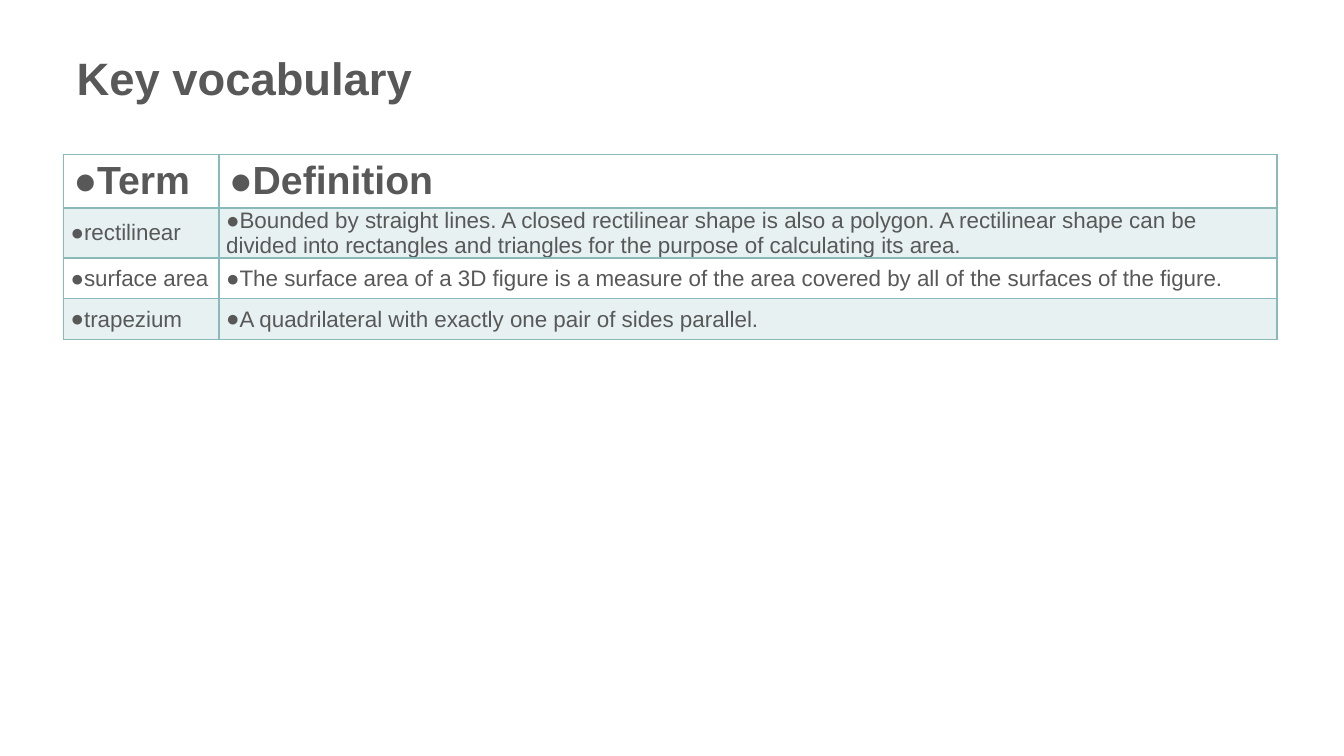
from lxml.etree import SubElement
from pptx import Presentation
from pptx.dml.color import RGBColor
from pptx.enum.text import MSO_ANCHOR, PP_ALIGN
from pptx.oxml.ns import qn
from pptx.util import Cm, Pt

TITLE = "Key vocabulary"
HEADINGS = ("Term", "Definition")
VOCABULARY = [
    ("rectilinear",
     "Bounded by straight lines. A closed rectilinear shape is also a polygon. "
     "A rectilinear shape can be divided into rectangles and triangles for the "
     "purpose of calculating its area."),
    ("surface area",
     "The surface area of a 3D figure is a measure of the area covered by all "
     "of the surfaces of the figure."),
    ("trapezium", "A quadrilateral with exactly one pair of sides parallel."),
]
COLOURS = {"text": "585858", "teal": "8AB9B9"}
FONT = "Arial"
COLUMN_WIDTHS = (Cm(3.92), Cm(26.66))
ROW_HEIGHT = Cm(1.03)
BAND_OPACITY = "20000"


def style_font(font, size, bold):
    font.name = FONT
    font.size = Pt(size)
    font.bold = bold
    font.color.rgb = RGBColor.from_string(COLOURS["text"])


def add_bullet(para):
    properties = para._p.get_or_add_pPr()
    properties.set("marL", "0")
    properties.set("indent", "0")
    colour = SubElement(properties, qn("a:buClr"))
    SubElement(colour, qn("a:srgbClr"), val=COLOURS["text"])
    SubElement(properties, qn("a:buFont"), typeface=FONT)
    SubElement(properties, qn("a:buChar"), char="●")


def add_borders(cell, top, bottom):
    properties = cell._tc.get_or_add_tcPr()
    for side, width in (("L", 1), ("R", 1), ("T", top), ("B", bottom)):
        line = SubElement(properties, qn(f"a:ln{side}"), w=str(Pt(width)))
        fill = SubElement(line, qn("a:solidFill"))
        SubElement(fill, qn("a:srgbClr"), val=COLOURS["teal"])


def fill_cell(cell, banded):
    if not banded:
        cell.fill.background()
        return
    cell.fill.solid()
    cell.fill.fore_color.rgb = RGBColor.from_string(COLOURS["teal"])
    colour = cell._tc.tcPr.find(f"{qn('a:solidFill')}/{qn('a:srgbClr')}")
    SubElement(colour, qn("a:alpha"), val=BAND_OPACITY)


def write_cell(cell, text, row_index):
    heading = row_index == 0
    cell.text_frame.text = text
    para = cell.text_frame.paragraphs[0]
    add_bullet(para)
    if not heading:
        para.space_after = Pt(4)
        cell.vertical_anchor = MSO_ANCHOR.MIDDLE
        cell.margin_left = cell.margin_right = Cm(0.18)
        cell.margin_top = cell.margin_bottom = 0
    style_font(para.runs[0].font, 28 if heading else 16, heading)
    add_borders(cell, 2 if row_index == 1 else 1, 2 if heading else 1)
    fill_cell(cell, row_index % 2 == 1)


def add_title(page):
    title = page.shapes.title
    title.left, title.top = Cm(1.68), Cm(1.19)
    title.width, title.height = Cm(30.48), Cm(2.72)
    frame = title.text_frame
    frame.text = TITLE
    frame.word_wrap = True
    frame.vertical_anchor = MSO_ANCHOR.TOP
    frame.margin_top = Cm(0.23)
    para = frame.paragraphs[0]
    para.alignment = PP_ALIGN.LEFT
    para.line_spacing = 0.9
    style_font(para.runs[0].font, 32.4, True)


def add_vocabulary(page):
    rows = [HEADINGS, *VOCABULARY]
    table = page.shapes.add_table(
        len(rows), len(HEADINGS), Cm(1.6), Cm(3.89),
        sum(COLUMN_WIDTHS), ROW_HEIGHT * len(rows)).table
    table.horz_banding = False
    for column, width in zip(table.columns, COLUMN_WIDTHS):
        column.width = width
    for row_index, texts in enumerate(rows):
        table.rows[row_index].height = ROW_HEIGHT
        for column_index, text in enumerate(texts):
            write_cell(table.cell(row_index, column_index), text, row_index)


def main():
    deck = Presentation()
    deck.slide_width, deck.slide_height = Cm(33.87), Cm(19.05)
    page = deck.slides.add_slide(deck.slide_layouts[5])
    add_title(page)
    add_vocabulary(page)
    deck.save("out.pptx")


if __name__ == "__main__":
    main()
